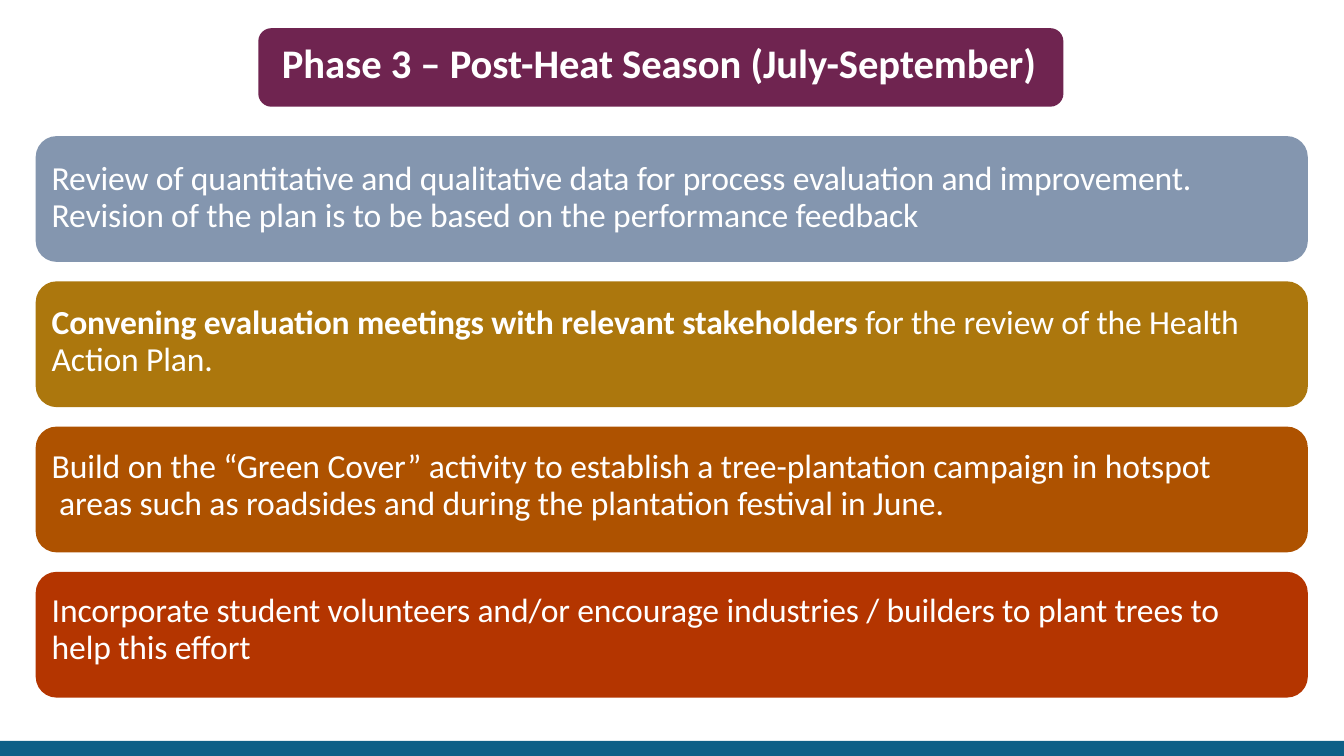
import pptx
import pptx.util
import pptx.dml.color
import pptx.enum.shapes
import pptx.enum.text
from dataclasses import dataclass

Cm = pptx.util.Cm
Pt = pptx.util.Pt
Kind = pptx.enum.shapes.MSO_SHAPE


@dataclass(frozen=True)
class Theme:
    font: str = "Calibri"
    ink: str = "FFFFFF"
    plum: str = "6F2450"
    blue: str = "0D5F87"
    bars: tuple = ("8496AF", "AC770D", "AE5200", "B43500")
    head: float = 29
    body: float = 24
    line: float = 26.4


THEME = Theme()

# Each step has a bold lead, which may be empty, the plain rest,
# and its letter spacing in hundredths of a point.
STEPS = (
    ("", "Review of quantitative and qualitative data for process evaluation "
         "and improvement.\vRevision of the plan is to be based on the "
         "performance feedback", -10),
    ("Convening evaluation meetings with relevant stakeholders",
     " for the review of the Health Action Plan.", -10),
    ("", "Build on the “Green Cover” activity to establish a tree-plantation "
         "campaign in hotspot\v areas such as roadsides and during the "
         "plantation festival in June.", -5),
    ("", "Incorporate student volunteers and/or encourage industries / "
         "builders to plant trees to\vhelp this effort", -10),
)


def add_block(slide, kind, box, color):
    """Add a filled shape without line or shadow; box is in centimetres."""
    block = slide.shapes.add_shape(kind, *map(Cm, box))
    block.shadow.inherit = False
    block.fill.solid()
    block.fill.fore_color.rgb = pptx.dml.color.RGBColor.from_string(color)
    block.line.fill.background()
    return block


def write(block, lead, rest, size, pads, gap):
    """Set a bold lead and plain rest; pads are left, top and right in cm."""
    frame = block.text_frame
    frame.word_wrap = True
    frame.vertical_anchor = pptx.enum.text.MSO_ANCHOR.TOP
    frame.margin_left, frame.margin_top, frame.margin_right = map(Cm, pads)
    frame.margin_bottom = 0
    para = frame.paragraphs[0]
    para.alignment = pptx.enum.text.PP_ALIGN.LEFT
    para.text = lead or rest
    if lead and rest:
        para.add_run().text = rest
    for i, run in enumerate(para.runs):
        run.font.name = THEME.font
        run.font.size = Pt(size)
        run.font.bold = bool(lead) and i == 0
        run.font.color.rgb = pptx.dml.color.RGBColor.from_string(THEME.ink)
        run._r.get_or_add_rPr().set("spc", str(gap))
    return para


def add_title(slide, text):
    block = add_block(slide, Kind.ROUNDED_RECTANGLE,
                      (6.51, 0.71, 20.29, 1.98), THEME.plum)
    write(block, text, "", THEME.head, (0.5, 0.15, 0.1), -5)


def add_steps(slide):
    top, pitch = 3.43, 3.66
    for i, ((lead, rest, gap), color) in enumerate(zip(STEPS, THEME.bars)):
        block = add_block(slide, Kind.ROUNDED_RECTANGLE,
                          (0.9, top + i * pitch, 32.06, 3.17), color)
        pads = (0.25, 0.45 - 0.03 * i, 0.9)
        para = write(block, lead, rest, THEME.body, pads, gap)
        para.line_spacing = Pt(THEME.line)


def main():
    deck = pptx.Presentation()
    deck.slide_width, deck.slide_height = Cm(33.87), Cm(19.05)
    slide = deck.slides.add_slide(deck.slide_layouts[6])
    add_steps(slide)
    add_title(slide, "Phase 3 – Post-Heat Season (July-September)")
    add_block(slide, Kind.RECTANGLE, (0, 18.67, 33.87, 0.38), THEME.blue)
    deck.save("out.pptx")


if __name__ == "__main__":
    main()
